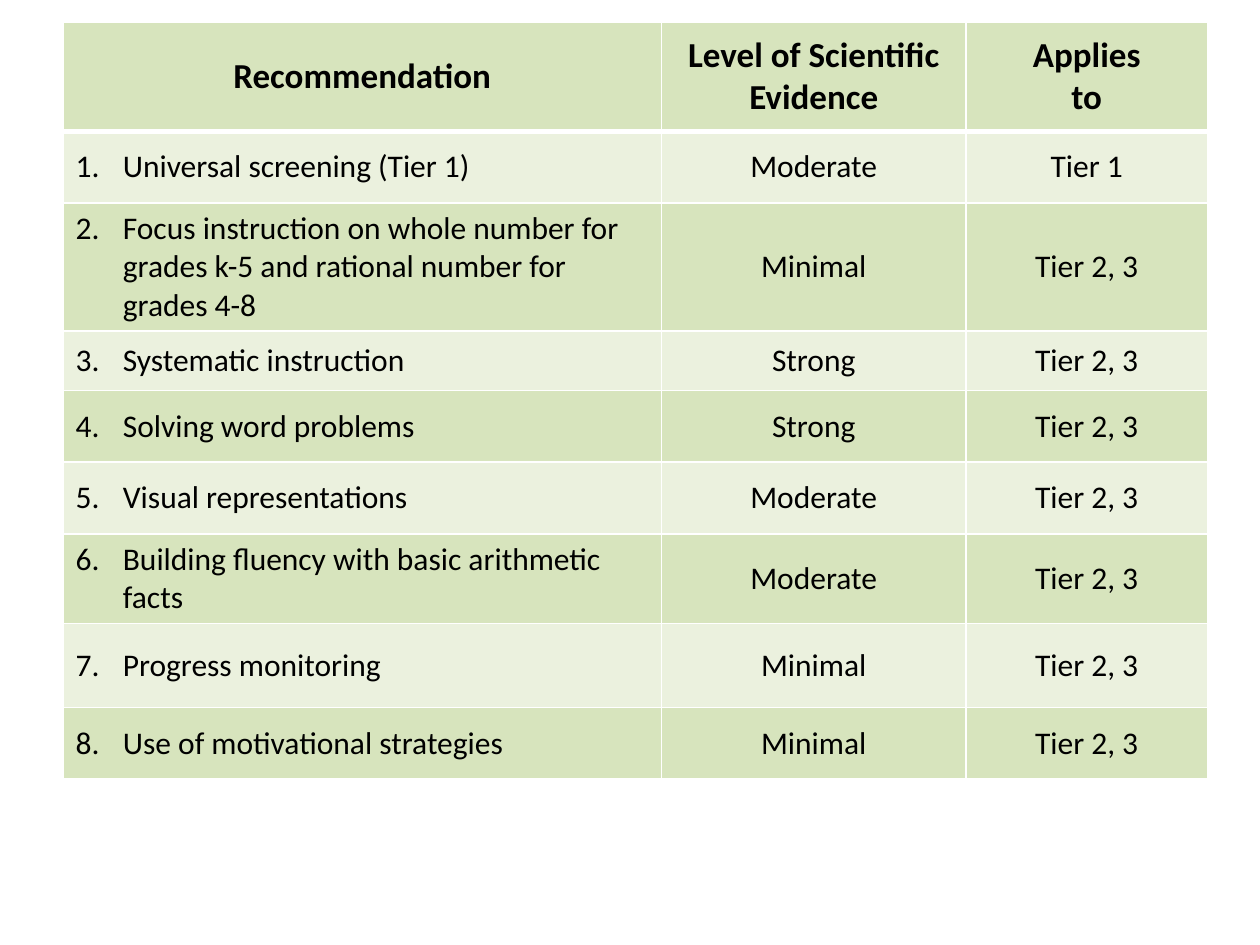
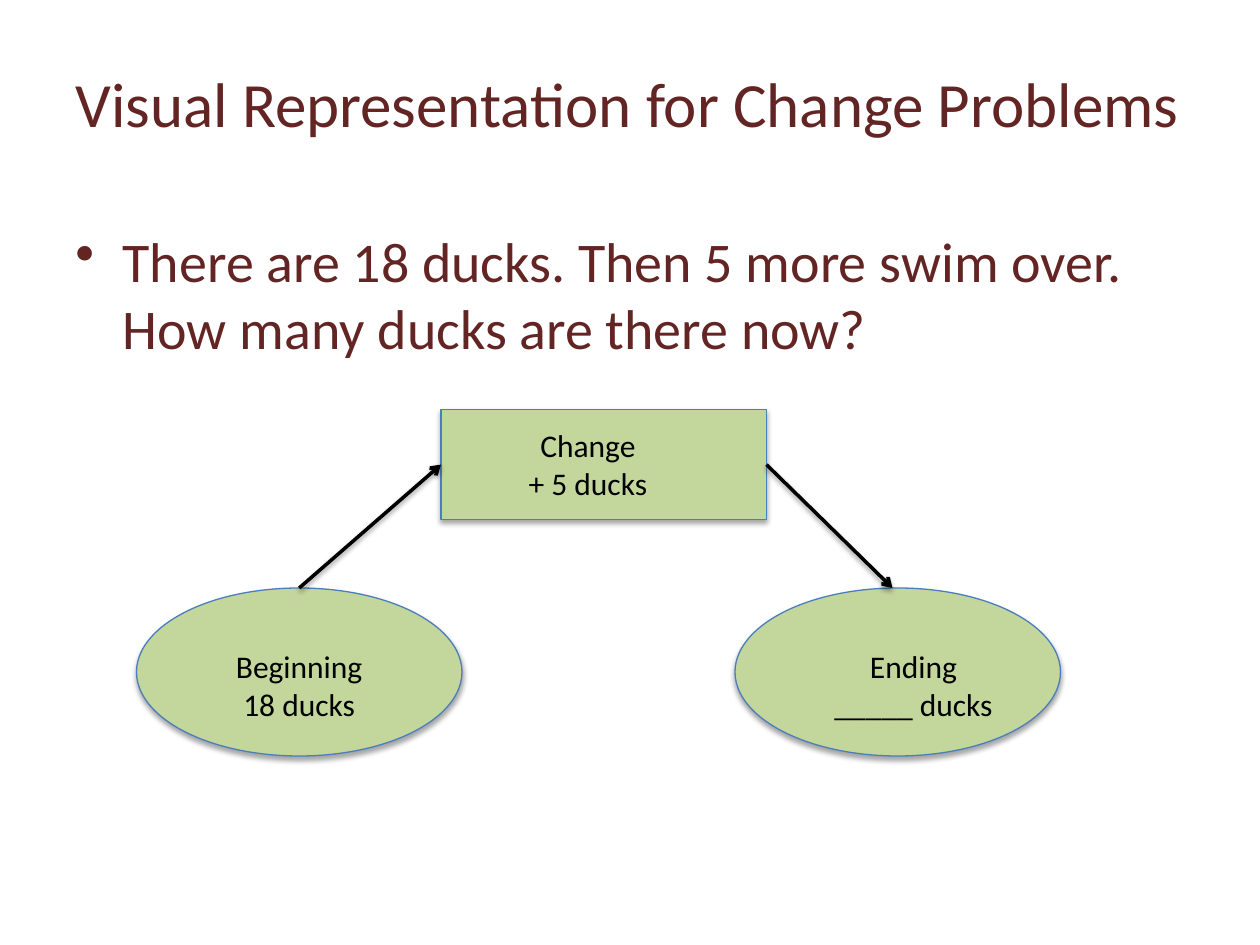
"""Build two slides on teaching recommendations and change problems in mathematics."""

from typing import NamedTuple

from lxml.etree import SubElement
from pptx import Presentation
from pptx.dml.color import RGBColor
from pptx.enum.shapes import MSO_CONNECTOR, MSO_SHAPE
from pptx.enum.text import MSO_ANCHOR, MSO_AUTO_SIZE, PP_ALIGN
from pptx.oxml.ns import qn
from pptx.util import Pt

FONT = "Calibri"
BLACK = "000000"
WHITE = "FFFFFF"
MAROON = "632523"
DARK_BAND = "D7E4BD"
LIGHT_BAND = "EBF1DE"
NODE_FILL = "C3D69B"
NODE_LINE = "4B7EBC"
INDENT = 27
BULLET = ("a:buChar", {"char": "•"})


class Box(NamedTuple):
    left: float
    top: float
    width: float
    height: float


class Node(NamedTuple):
    kind: MSO_SHAPE
    box: Box
    label: str
    label_box: Box


class Arrow(NamedTuple):
    start: tuple[float, float]
    end: tuple[float, float]


class Recommendation(NamedTuple):
    text: str
    evidence: str
    tiers: str
    height: float


TABLE_BOX = Box(36, 12.5, 654, 425.5)
COLUMN_WIDTHS = (342, 174, 138)
HEADER = Recommendation("Recommendation", "Level of Scientific Evidence", "Applies\nto", 62.5)
RECOMMENDATIONS = (
    Recommendation("Universal screening (Tier 1)", "Moderate", "Tier 1", 41),
    Recommendation("Focus instruction on whole number for grades k-5 and rational number for grades 4-8",
                   "Minimal", "Tier 2, 3", 69),
    Recommendation("Systematic instruction", "Strong", "Tier 2, 3", 34),
    Recommendation("Solving word problems", "Strong", "Tier 2, 3", 41),
    Recommendation("Visual representations", "Moderate", "Tier 2, 3", 41),
    Recommendation("Building fluency with basic arithmetic facts", "Moderate", "Tier 2, 3", 48),
    Recommendation("Progress monitoring", "Minimal", "Tier 2, 3", 48),
    Recommendation("Use of motivational strategies", "Minimal", "Tier 2, 3", 41),
)

TITLE_BOX = Box(36, 21.5, 648, 74)
BODY_BOX = Box(36, 126, 648, 356)
NODES = (
    Node(MSO_SHAPE.RECTANGLE, Box(252, 234, 186, 63), "Change\n+ 5 ducks", Box(264, 240, 144, 51)),
    Node(MSO_SHAPE.OVAL, Box(78, 336, 186, 96), "Beginning\n18 ducks", Box(120, 366, 102, 51)),
    Node(MSO_SHAPE.OVAL, Box(420, 336, 186, 96), "Ending\n_____ ducks", Box(468, 366, 108, 51)),
)
ARROWS = (Arrow((171, 336), (252, 265.5)), Arrow((438, 265.5), (510, 336)))


def color(value: str) -> RGBColor:
    """Turn a hex string into a colour."""
    return RGBColor.from_string(value)


def points(values) -> list[Pt]:
    """Turn numbers into lengths in points."""
    return [Pt(value) for value in values]


def write(text_frame, text: str, *, size: float = 18, bold: bool = False, ink: str = BLACK,
          align=PP_ALIGN.CENTER, marker=None) -> None:
    """Write each line of the text as a paragraph, with an optional list marker."""
    for index, line in enumerate(text.split("\n")):
        paragraph = text_frame.add_paragraph() if index else text_frame.paragraphs[0]
        paragraph.alignment = align
        if marker:
            tag, attributes = marker
            properties = paragraph._p.get_or_add_pPr()
            properties.set("marL", str(Pt(INDENT)))
            properties.set("indent", str(Pt(-INDENT)))
            SubElement(properties, qn(tag), attributes)
        run = paragraph.add_run()
        run.text = line
        run.font.name = FONT
        run.font.size = Pt(size)
        run.font.bold = bold
        run.font.color.rgb = color(ink)


def add_text(slide, box: Box, text: str, *, anchor=MSO_ANCHOR.TOP,
             auto_size=MSO_AUTO_SIZE.NONE, **text_format) -> None:
    """Add a wrapping text box."""
    text_frame = slide.shapes.add_textbox(*points(box)).text_frame
    text_frame.word_wrap = True
    text_frame.auto_size = auto_size
    text_frame.vertical_anchor = anchor
    write(text_frame, text, **text_format)


def add_shadow(shape, opacity: int, distance: float) -> None:
    """Give a shape or connector a soft shadow below it."""
    effects = SubElement(shape._element.spPr, qn("a:effectLst"))
    shadow = SubElement(effects, qn("a:outerShdw"), blurRad=str(Pt(3.1)), dist=str(Pt(distance)),
                        dir="5400000", rotWithShape="0")
    shade = SubElement(shadow, qn("a:srgbClr"), val=BLACK)
    SubElement(shade, qn("a:alpha"), val=str(opacity * 1000))


def add_node(slide, node: Node) -> None:
    """Add a shaded diagram shape."""
    shape = slide.shapes.add_shape(node.kind, *points(node.box))
    shape.fill.solid()
    shape.fill.fore_color.rgb = color(NODE_FILL)
    shape.line.color.rgb = color(NODE_LINE)
    shape.line.width = Pt(0.75)
    add_shadow(shape, 35, 1.8)


def add_arrow(slide, arrow: Arrow) -> None:
    """Add a straight connector with an open arrowhead."""
    connector = slide.shapes.add_connector(MSO_CONNECTOR.STRAIGHT, *points(arrow.start + arrow.end))
    connector.line.color.rgb = color(BLACK)
    connector.line.width = Pt(2)
    SubElement(connector.line._get_or_add_ln(), qn("a:tailEnd"), type="arrow")
    add_shadow(connector, 38, 1.6)


def style_cell(cell, fill: str, top: float, bottom: float) -> None:
    """Set a cell's white borders, fill and anchor."""
    properties = cell._tc.get_or_add_tcPr()
    for side, width in {"L": 1, "R": 1, "T": top, "B": bottom}.items():
        border = SubElement(properties, qn(f"a:ln{side}"), w=str(Pt(width)))
        SubElement(SubElement(border, qn("a:solidFill")), qn("a:srgbClr"), val=WHITE)
    cell.fill.solid()
    cell.fill.fore_color.rgb = color(fill)
    cell.vertical_anchor = MSO_ANCHOR.MIDDLE


def build_recommendations(slide) -> None:
    """Build the table of recommendations and their evidence."""
    rows = (HEADER, *RECOMMENDATIONS)
    table = slide.shapes.add_table(len(rows), len(COLUMN_WIDTHS), *points(TABLE_BOX)).table
    for column, width in zip(table.columns, COLUMN_WIDTHS):
        column.width = Pt(width)
    for number, row in enumerate(rows):
        table.rows[number].height = Pt(row.height)
        is_header = number == 0
        for position, text in enumerate((row.text, row.evidence, row.tiers)):
            cell = table.cell(number, position)
            style_cell(cell, LIGHT_BAND if number % 2 else DARK_BAND,
                       top=3 if number == 1 else 1, bottom=3 if is_header else 1)
            if is_header:
                write(cell.text_frame, text, size=20, bold=True)
            elif position == 0:
                numbering = ("a:buAutoNum", {"type": "arabicPeriod", "startAt": str(number)})
                write(cell.text_frame, text, align=PP_ALIGN.LEFT, marker=numbering)
            else:
                write(cell.text_frame, text)


def build_change_problem(slide) -> None:
    """Build the duck problem and its diagram."""
    add_text(slide, TITLE_BOX, "Visual Representation for Change Problems",
             anchor=MSO_ANCHOR.MIDDLE, size=36, ink=MAROON, align=PP_ALIGN.LEFT)
    add_text(slide, BODY_BOX,
             "There are 18 ducks. Then 5 more swim over. How many ducks are there now?",
             size=32, ink=MAROON, align=PP_ALIGN.LEFT, marker=BULLET)
    for node in NODES:
        add_node(slide, node)
    for arrow in ARROWS:
        add_arrow(slide, arrow)
    for node in NODES:
        add_text(slide, node.label_box, node.label, auto_size=MSO_AUTO_SIZE.SHAPE_TO_FIT_TEXT)


def main() -> None:
    """Build and save the presentation."""
    presentation = Presentation()
    presentation.slide_width, presentation.slide_height = Pt(720), Pt(540)
    for build in (build_recommendations, build_change_problem):
        build(presentation.slides.add_slide(presentation.slide_layouts[6]))
    presentation.save("out.pptx")


if __name__ == "__main__":
    main()
